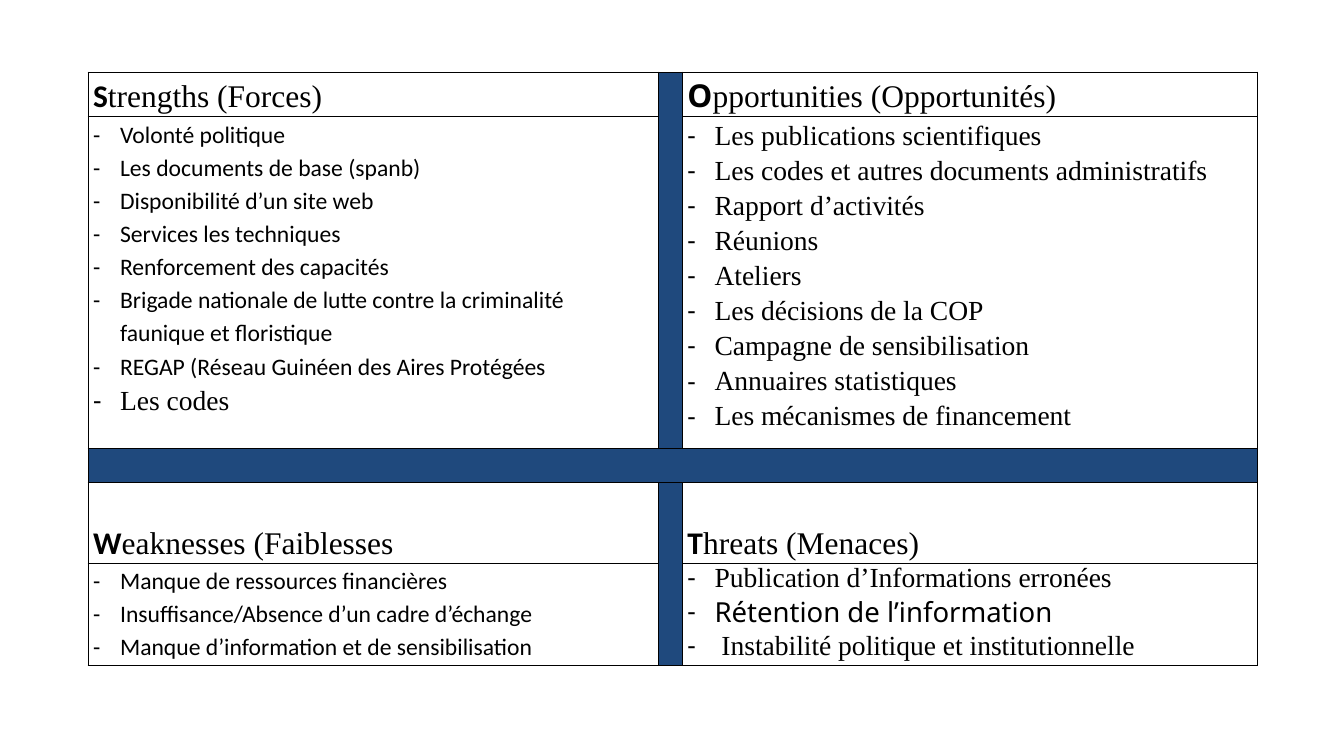
from lxml.etree import SubElement
from pptx import Presentation
from pptx.dml.color import RGBColor
from pptx.enum.text import MSO_ANCHOR, PP_ALIGN
from pptx.oxml import parse_xml
from pptx.oxml.ns import nsdecls, qn
from pptx.util import Pt

# Content: (row, column) -> (bold initial, its font, rest of the heading)
SANS, SERIF, NOTO = "Calibri", "Times New Roman", "Noto Sans"
HEADINGS = {
    (0, 0): ("S", SANS, "trengths (Forces)"),
    (0, 2): ("O", NOTO, "pportunities (Opportunités)"),
    (3, 0): ("W", SANS, "eaknesses (Faiblesses"),
    (3, 2): ("T", SANS, "hreats (Menaces)"),
}
# (row, column) -> (line spacing, groups of (font, size, items))
LISTS = {
    (1, 0): (1.15, [
        (SANS, 24, ["Volonté politique", "Les documents de base (spanb)",
                    "Disponibilité d’un site web", "Services les techniques",
                    "Renforcement des capacités",
                    "Brigade nationale de lutte contre la criminalité faunique et floristique",
                    "REGAP (Réseau Guinéen des Aires Protégées"]),
        (SERIF, 28, ["Les codes"])]),
    (1, 2): (1.15, [
        (SERIF, 28, ["Les publications scientifiques",
                     "Les codes et autres documents administratifs",
                     "Rapport d’activités", "Réunions", "Ateliers",
                     "Les décisions de la COP", "Campagne de sensibilisation",
                     "Annuaires statistiques", "Les mécanismes de financement"])]),
    (4, 0): (1.15, [
        (SANS, 24, ["Manque de ressources financières",
                    "Insuffisance/Absence d’un cadre d’échange",
                    "Manque d’information et de sensibilisation"])]),
    (4, 2): (1.0, [
        (SERIF, 28, ["Publication d’Informations erronées"]),
        (NOTO, 28, ["Rétention de l’information"]),
        (SERIF, 28, [" Instabilité politique et institutionnelle"])]),
}
# Blue separators: (first cell, last cell)
BARS = [((0, 1), (1, 1)), ((2, 0), (2, 2)), ((3, 1), (4, 1))]

# Layout in px
PAGE = (1343, 755)
LEFT, TOP = 88, 72
COLUMNS = [570, 24, 575]
ROWS = [44, 332, 34, 80, 102]
CELL_MARGIN, INDENT = 5, 27

BLACK = RGBColor(0x00, 0x00, 0x00)
WHITE = RGBColor(0xFF, 0xFF, 0xFF)
BLUE = RGBColor(0x1F, 0x49, 0x7D)


def px(length):
    return round(length * 914400 / 70.8)


def add_borders(cell):
    properties = cell._tc.get_or_add_tcPr()
    for place, side in enumerate(("lnL", "lnR", "lnT", "lnB")):
        properties.insert(place, parse_xml(
            f'<a:{side} {nsdecls("a")} w="{Pt(1)}"><a:solidFill>'
            f'<a:srgbClr val="{BLACK}"/></a:solidFill></a:{side}>'))


def add_dash(para):
    properties = para._p.get_or_add_pPr()
    properties.set("marL", str(px(INDENT)))
    properties.set("indent", str(-px(INDENT)))
    SubElement(properties, qn("a:buFont")).set("typeface", SANS)
    SubElement(properties, qn("a:buChar")).set("char", "-")


def write_heading(cell, initial, initial_font, rest):
    cell.vertical_anchor = MSO_ANCHOR.BOTTOM
    para = cell.text_frame.paragraphs[0]
    para.line_spacing = 1.0 if initial_font == NOTO else 1.15
    para.font.size = Pt(32)
    para.font.color.rgb = BLACK
    for text, name, bold in ((initial, initial_font, True), (rest, SERIF, False)):
        span = para.add_run()
        span.text = text
        span.font.name = name
        span.font.bold = bold


def write_list(cell, spacing, groups):
    frame = cell.text_frame
    items = [(name, size, text) for name, size, texts in groups for text in texts]
    for number, (name, size, text) in enumerate(items):
        para = frame.add_paragraph() if number else frame.paragraphs[0]
        add_dash(para)
        para.alignment = PP_ALIGN.LEFT
        para.line_spacing = spacing
        para.add_run().text = text
        para.font.name = name
        para.font.size = Pt(size)
        para.font.color.rgb = BLACK


def main():
    deck = Presentation()
    deck.slide_width, deck.slide_height = map(px, PAGE)
    page = deck.slides.add_slide(deck.slide_layouts[6])

    # Table grid
    table = page.shapes.add_table(len(ROWS), len(COLUMNS), px(LEFT), px(TOP),
                                  px(sum(COLUMNS)), px(sum(ROWS))).table
    table.first_row = table.horz_banding = False
    for column, width in zip(table.columns, COLUMNS):
        column.width = px(width)
    for row, height in zip(table.rows, ROWS):
        row.height = px(height)
    for cell in table.iter_cells():
        cell.margin_left = cell.margin_right = px(CELL_MARGIN)
        cell.margin_top = cell.margin_bottom = 0
        cell.fill.solid()
        cell.fill.fore_color.rgb = WHITE
        add_borders(cell)

    # Separators
    for first, last in BARS:
        bar = table.cell(*first)
        bar.merge(table.cell(*last))
        bar.fill.fore_color.rgb = BLUE

    # Quadrants
    for place, heading in HEADINGS.items():
        write_heading(table.cell(*place), *heading)
    for place, (spacing, groups) in LISTS.items():
        write_list(table.cell(*place), spacing, groups)

    deck.save("out.pptx")


if __name__ == "__main__":
    main()
